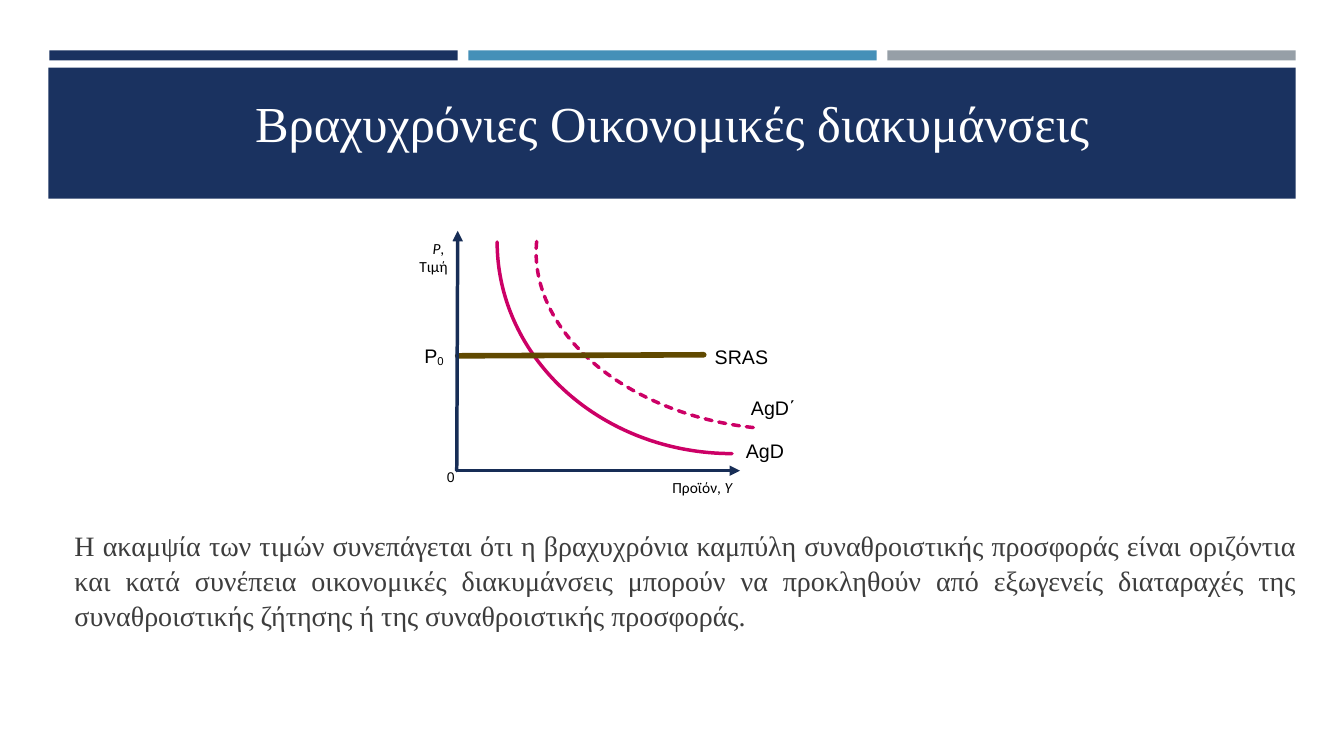
from pptx import Presentation
from pptx.dml.color import RGBColor
from pptx.enum.dml import MSO_LINE
from pptx.enum.shapes import MSO_CONNECTOR, MSO_SHAPE
from pptx.enum.text import MSO_ANCHOR, PP_ALIGN
from pptx.oxml.ns import qn
from pptx.util import Inches, Pt
from lxml.etree import SubElement

NAVY = RGBColor(0x1A, 0x32, 0x60)
BLUE = RGBColor(0x45, 0x90, 0xB8)
GREY = RGBColor(0x96, 0x9F, 0xA7)
AXIS = RGBColor(0x17, 0x2D, 0x56)
DEMAND = RGBColor(0xCC, 0x00, 0x66)
SUPPLY = RGBColor(0x60, 0x49, 0x00)
BODY = RGBColor(0x3D, 0x3D, 0x3D)
BLACK = RGBColor(0, 0, 0)
WHITE = RGBColor(0xFF, 0xFF, 0xFF)

TITLE = "Βραχυχρόνιες Οικονομικές διακυμάνσεις"
EXPLANATION = (
    "Η ακαμψία των τιμών συνεπάγεται ότι η βραχυχρόνια καμπύλη "
    "συναθροιστικής προσφοράς είναι οριζόντια και κατά συνέπεια "
    "οικονομικές διακυμάνσεις μπορούν να προκληθούν από εξωγενείς "
    "διαταραχές της συναθροιστικής ζήτησης ή της συναθροιστικής προσφοράς."
)


def add_bar(slide, left, top, width, height, color):
    bar = slide.shapes.add_shape(
        MSO_SHAPE.RECTANGLE, Inches(left), Inches(top), Inches(width), Inches(height))
    bar.shadow.inherit = False
    bar.fill.solid()
    bar.fill.fore_color.rgb = color
    bar.line.fill.background()


def style_line(line, color, width):
    line.color.rgb = color
    line.width = Pt(width)


def add_demand_curve(slide, left, top, width, height, rotation, dashed=False):
    """Draw a quarter ellipse, turned so that it falls from left to right."""
    curve = slide.shapes.add_shape(
        MSO_SHAPE.ARC, Inches(left), Inches(top), Inches(width), Inches(height))
    curve.rotation = rotation
    curve.shadow.inherit = False
    curve.fill.background()
    style_line(curve.line, DEMAND, 2.5)
    if dashed:
        curve.line.dash_style = MSO_LINE.SQUARE_DOT
    curve.line._get_or_add_ln().set("cap", "rnd")


def add_line(slide, start, end, color, width, arrow=False):
    line = slide.shapes.add_connector(
        MSO_CONNECTOR.STRAIGHT, *(Inches(value) for value in (*start, *end)))
    style_line(line.line, color, width)
    outline = line.line._get_or_add_ln()
    outline.set("cap", "rnd")
    if arrow:
        SubElement(outline, qn("a:tailEnd"), type="triangle")
    SubElement(line._element.spPr, qn("a:effectLst"))


def add_text(slide, left, top, width, height, paragraphs, size, font="Arial",
             color=BLACK, align=PP_ALIGN.LEFT):
    """Add a text box; each paragraph is a list of run texts."""
    box = slide.shapes.add_textbox(
        Inches(left), Inches(top), Inches(width), Inches(height))
    frame = box.text_frame
    frame.word_wrap = True
    for index, texts in enumerate(paragraphs):
        para = frame.add_paragraph() if index else frame.paragraphs[0]
        para.alignment = align
        for text in texts:
            span = para.add_run()
            span.text = text
            span.font.size = Pt(size)
            span.font.name = font
            span.font.color.rgb = color
    return frame


def add_header(slide):
    for index, color in enumerate((NAVY, BLUE, GREY)):
        add_bar(slide, 0.49 + index * 4.155, 0.5, 4.05, 0.1, color)
    add_bar(slide, 0.48, 0.67, 12.37, 1.3, NAVY)
    title = add_text(slide, 0.64, 0.69, 12.06, 0.87, [[TITLE]], 36,
                     "Times New Roman", WHITE, PP_ALIGN.CENTER)
    title.vertical_anchor = MSO_ANCHOR.BOTTOM


def add_diagram(slide):
    add_demand_curve(slide, 4.93, 0.3, 4.66, 4.2, 180)
    add_demand_curve(slide, 5.31, 1.01, 4.66, 3.24, 186, dashed=True)
    add_line(slide, (4.54, 3.53), (6.98, 3.52), SUPPLY, 4)
    add_line(slide, (4.53, 4.67), (4.54, 2.29), AXIS, 2.5, arrow=True)
    add_line(slide, (4.54, 4.67), (7.34, 4.67), AXIS, 2.5, arrow=True)

    for text, left, top in (("SRAS", 6.99, 3.37), ("AgD", 7.3, 4.31), ("AgD΄", 7.35, 3.88)):
        add_text(slide, left, top, 0.9, 0.34, [[text]], 14)

    price_level = add_text(slide, 4.11, 3.36, 0.45, 0.34, [["P", "0"]], 14)
    subscript = price_level.paragraphs[0].runs[1]
    subscript.font._element.set("baseline", "-10000")

    price = add_text(slide, 3.36, 2.32, 1.18, 0.46, [["P", ", "], ["Τιμή"]], 11,
                     "Calibri", align=PP_ALIGN.RIGHT)
    price.paragraphs[0].runs[0].font.italic = True
    output = add_text(slide, 6.42, 4.69, 0.94, 0.29, [["Προϊόν, ", "Y"]], 11,
                      "Calibri", align=PP_ALIGN.RIGHT)
    output.paragraphs[0].runs[1].font.italic = True
    origin = add_text(slide, 4.35, 4.6, 0.16, 0.27, [["0"]], 10, align=PP_ALIGN.RIGHT)
    origin.margin_left = origin.margin_right = 0


def add_explanation(slide):
    frame = add_text(slide, 0.64, 5.18, 12.32, 1.97, [[EXPLANATION]], 20,
                     "Times New Roman", BODY, PP_ALIGN.JUSTIFY)
    para = frame.paragraphs[0]
    para.line_spacing = 1.04
    para.space_before = Pt(3)
    para.space_after = Pt(6)


def main():
    deck = Presentation()
    deck.slide_width = Inches(13.33)
    deck.slide_height = Inches(7.5)
    slide = deck.slides.add_slide(deck.slide_layouts[6])
    add_header(slide)
    add_diagram(slide)
    add_explanation(slide)
    deck.save("out.pptx")


if __name__ == "__main__":
    main()
